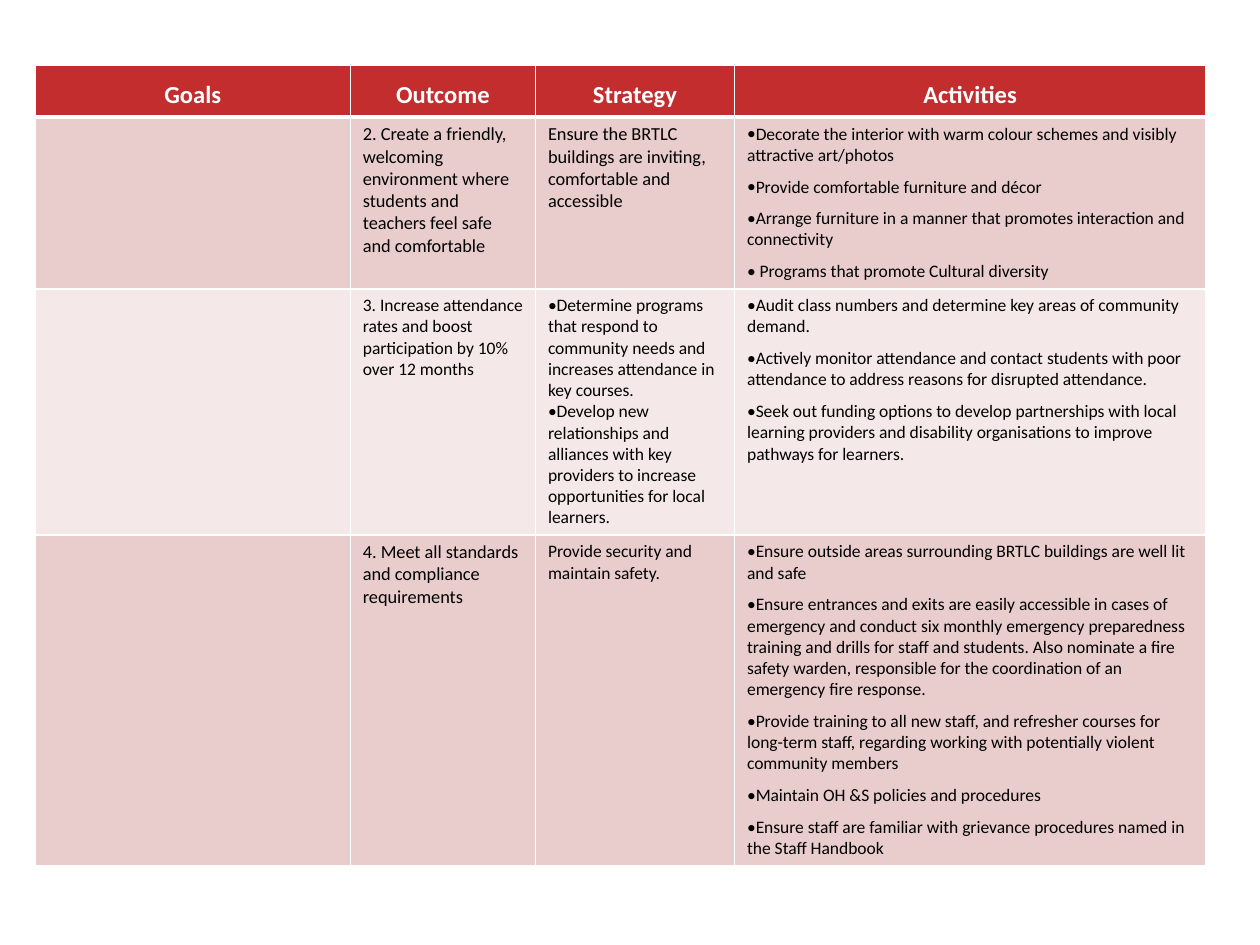
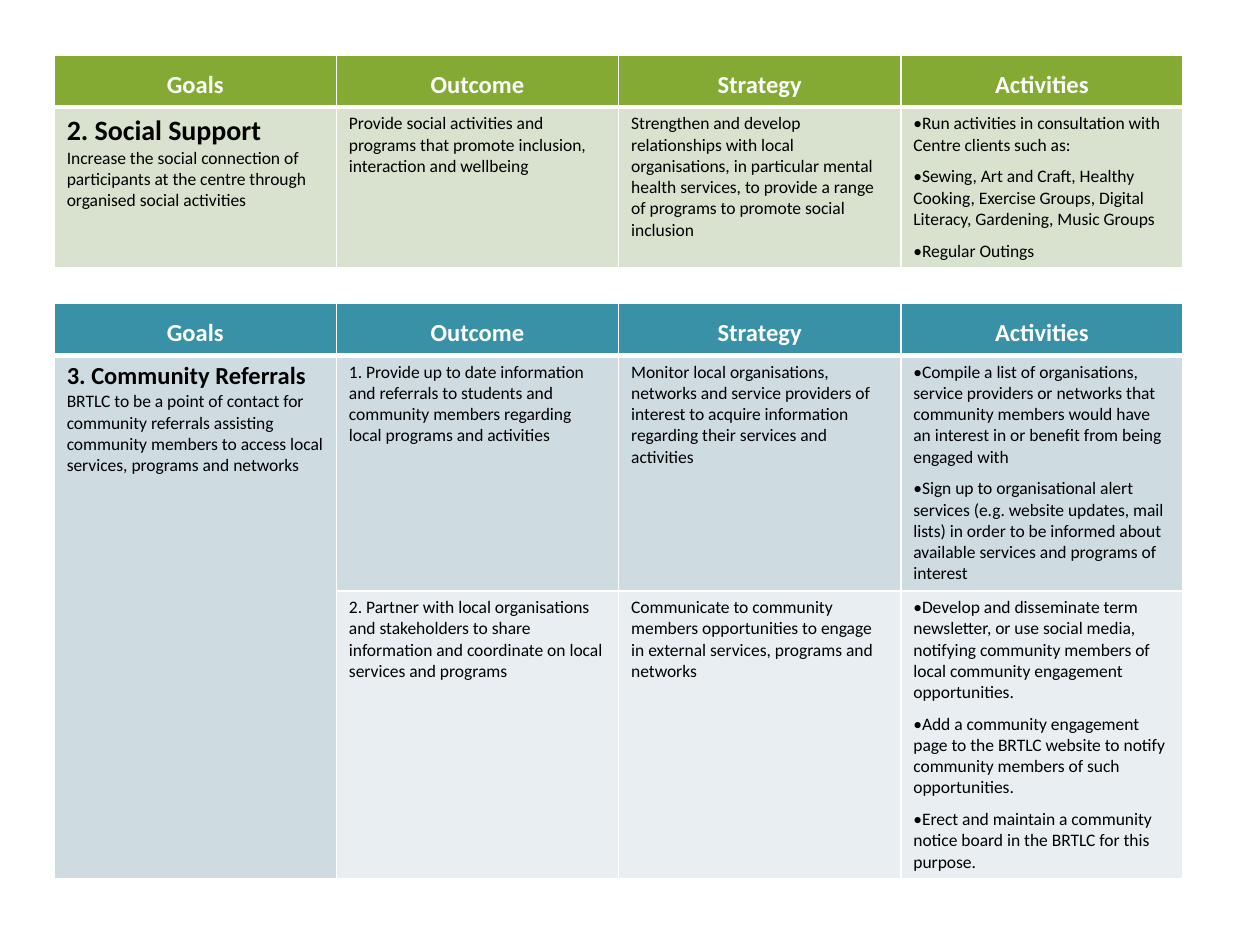
import dataclasses

import lxml.etree
import pptx
import pptx.dml.color
import pptx.enum.text
import pptx.oxml.ns
import pptx.util

Inches = pptx.util.Inches
Pt = pptx.util.Pt


@dataclasses.dataclass(frozen=True)
class Palette:
    header: str
    dark_band: str
    light_band: str


@dataclasses.dataclass(frozen=True)
class Theme:
    font: str = "Calibri"
    text: str = "000000"
    header_text: str = "FFFFFF"
    border: str = "FFFFFF"
    header_size: float = 14
    body_size: float = 10
    outcome_size: float = 10.5
    support_size: float = 16
    referral_size: float = 14
    paragraph_gap: float = 6
    header_spacing: float = 1.5
    border_width: float = 1
    header_border_width: float = 3
    header_height: float = 0.41
    header_margin: float = 0.07
    red: Palette = Palette("C32D2E", "E9CDCD", "F5E8E8")
    green: Palette = Palette("84AA33", "D9E2CE", "D9E2CE")
    blue: Palette = Palette("3891A7", "CEDCE1", "E8EEF1")


@dataclasses.dataclass(frozen=True)
class Line:
    text: str
    size: float
    bold: bool = False
    bullet: bool = False
    before: float = 0
    after: float = 0


THEME = Theme()
HEADINGS = ["Goals", "Outcome", "Strategy", "Activities"]


def plain(text, size=THEME.body_size):
    return [Line(text, size)]


def bullets(*texts, before=0, after=0):
    return [Line(text, THEME.body_size, bullet=True, before=before, after=after) for text in texts]


def goal(title, size, text):
    return [Line(title, size, bold=True), *plain(text)]


class PlanDeck:
    def __init__(self, theme):
        self.theme = theme
        self.presentation = pptx.Presentation()
        self.presentation.slide_width = Inches(10)
        self.presentation.slide_height = Inches(7.5)
        self.slide = None

    def add_slide(self):
        self.slide = self.presentation.slides.add_slide(self.presentation.slide_layouts[6])

    def add_run(self, paragraph, text, size, color, bold):
        run = paragraph.add_run()
        run.text = text
        run.font.name = self.theme.font
        run.font.size = Pt(size)
        run.font.bold = bold
        run.font.color.rgb = pptx.dml.color.RGBColor.from_string(color)

    def add_bullet(self, paragraph):
        properties = paragraph._p.get_or_add_pPr()
        properties.set("marL", "0")
        properties.set("indent", "0")
        lxml.etree.SubElement(properties, pptx.oxml.ns.qn("a:buFont"), typeface=self.theme.font)
        lxml.etree.SubElement(properties, pptx.oxml.ns.qn("a:buChar"), char="•")

    def style_cell(self, cell, color, top, bottom):
        properties = cell._tc.get_or_add_tcPr()
        side = self.theme.border_width
        for edge, width in (("L", side), ("R", side), ("T", top), ("B", bottom)):
            line = lxml.etree.SubElement(properties, pptx.oxml.ns.qn(f"a:ln{edge}"), w=str(Pt(width)))
            fill = lxml.etree.SubElement(line, pptx.oxml.ns.qn("a:solidFill"))
            lxml.etree.SubElement(fill, pptx.oxml.ns.qn("a:srgbClr"), val=self.theme.border)
        cell.fill.solid()
        cell.fill.fore_color.rgb = pptx.dml.color.RGBColor.from_string(color)

    def add_header(self, cell, text, palette):
        theme = self.theme
        self.style_cell(cell, palette.header, theme.border_width, theme.header_border_width)
        cell.margin_left = cell.margin_right = Inches(theme.header_margin)
        cell.margin_top = cell.margin_bottom = 0
        paragraph = cell.text_frame.paragraphs[0]
        paragraph.alignment = pptx.enum.text.PP_ALIGN.CENTER
        paragraph.line_spacing = theme.header_spacing
        paragraph.space_before = Pt(theme.paragraph_gap)
        self.add_run(paragraph, text, theme.header_size, theme.header_text, True)

    def add_lines(self, cell, lines):
        for index, line in enumerate(lines):
            frame = cell.text_frame
            paragraph = frame.add_paragraph() if index else frame.paragraphs[0]
            paragraph.space_before = Pt(line.before)
            paragraph.space_after = Pt(line.after)
            if line.bullet:
                self.add_bullet(paragraph)
            self.add_run(paragraph, line.text, line.size, self.theme.text, line.bold)

    def add_plan(self, left, top, widths, heights, palette, rows):
        theme = self.theme
        heights = [theme.header_height, *heights]
        shape = self.slide.shapes.add_table(
            len(heights), len(widths), Inches(left), Inches(top),
            Inches(sum(widths)), Inches(sum(heights)))
        table = shape.table
        table.horz_banding = False
        for column, width in zip(table.columns, widths):
            column.width = Inches(width)
        for row, height in zip(table.rows, heights):
            row.height = Inches(height)
        for column, heading in enumerate(HEADINGS):
            self.add_header(table.cell(0, column), heading, palette)
        for row, contents in enumerate(rows, start=1):
            color = palette.dark_band if row % 2 else palette.light_band
            top_width = theme.header_border_width if row == 1 else theme.border_width
            for column, lines in enumerate(contents):
                cell = table.cell(row, column)
                self.style_cell(cell, color, top_width, theme.border_width)
                self.add_lines(cell, lines)
        return table


ENVIRONMENT_ROWS = [
    [
        [],
        plain("2. Create a friendly, welcoming environment where students and teachers feel safe and comfortable",
              THEME.outcome_size),
        plain("Ensure the BRTLC buildings are inviting, comfortable and accessible", THEME.outcome_size),
        bullets(
            "Decorate the interior with warm colour schemes and visibly attractive art/photos",
            "Provide comfortable furniture and décor",
            "Arrange furniture in a manner that promotes interaction and connectivity",
            " Programs that promote Cultural diversity",
            after=THEME.paragraph_gap),
    ],
    [
        [],
        plain("3. Increase attendance rates and boost participation by 10% over 12 months"),
        bullets(
            "Determine programs that respond to community needs and increases attendance in key courses.",
            "Develop new relationships and alliances with key providers to increase opportunities "
            "for local learners."),
        bullets(
            "Audit class numbers and determine key areas of community demand.",
            "Actively monitor attendance and contact students with poor attendance to address reasons "
            "for disrupted attendance.",
            "Seek out funding options to develop partnerships with local learning providers and "
            "disability organisations to improve pathways for learners.",
            after=THEME.paragraph_gap),
    ],
    [
        [],
        plain("4. Meet all standards and compliance requirements", THEME.outcome_size),
        plain("Provide security and maintain safety."),
        bullets(
            "Ensure outside areas surrounding BRTLC buildings are well lit and safe",
            "Ensure entrances and exits are easily accessible in cases of emergency and conduct six "
            "monthly emergency preparedness training and drills for staff and students. Also nominate "
            "a fire safety warden, responsible for the coordination of an emergency fire response.",
            "Provide training to all new staff, and refresher courses for long-term staff, regarding "
            "working with potentially violent community members",
            "Maintain OH &S policies and procedures",
            "Ensure staff are familiar with grievance procedures named in the Staff Handbook",
            after=THEME.paragraph_gap),
    ],
]

SOCIAL_ROWS = [
    [
        goal("2. Social Support", THEME.support_size,
             "Increase the social connection of participants at the centre through organised social activities"),
        plain("Provide social activities and programs that promote inclusion, interaction and wellbeing"),
        plain("Strengthen and develop relationships with local organisations, in particular mental health "
              "services, to provide a range of programs to promote social inclusion"),
        bullets(
            "Run activities in consultation with Centre clients such as:",
            "Sewing, Art and Craft, Healthy Cooking, Exercise Groups, Digital Literacy, Gardening, Music Groups",
            "Regular Outings",
            before=THEME.paragraph_gap),
    ],
]

REFERRAL_ROWS = [
    [
        goal("3. Community Referrals", THEME.referral_size,
             "BRTLC to be a point of contact for community referrals assisting community members to access "
             "local services, programs and networks"),
        plain("1. Provide up to date information and referrals to students and community members regarding "
              "local programs and activities"),
        plain("Monitor local organisations, networks and service providers of interest to acquire "
              "information regarding their services and activities"),
        bullets(
            "Compile a list of organisations, service providers or networks that community members would "
            "have an interest in or benefit from being engaged with",
            "Sign up to organisational alert services (e.g. website updates, mail lists) in order to be "
            "informed about available services and programs of interest",
            before=THEME.paragraph_gap),
    ],
    [
        [],
        plain("2. Partner with local organisations and stakeholders to share information and coordinate on "
              "local services and programs"),
        plain("Communicate to community members opportunities to engage in external services, programs "
              "and networks"),
        bullets(
            "Develop and disseminate term newsletter, or use social media, notifying community members of "
            "local community engagement opportunities.",
            "Add a community engagement page to the BRTLC website to notify community members of such "
            "opportunities.",
            "Erect and maintain a community notice board in the BRTLC for this purpose.",
            before=THEME.paragraph_gap),
    ],
]


def main():
    deck = PlanDeck(THEME)

    deck.add_slide()
    deck.add_plan(0.28, 0.52, [2.5, 1.47, 1.58, 3.74], [1.36, 1.95, 2.62], THEME.red, ENVIRONMENT_ROWS)

    deck.add_slide()
    equal_widths = [2.24] * len(HEADINGS)
    deck.add_plan(0.43, 0.44, equal_widths, [1.27], THEME.green, SOCIAL_ROWS)
    referrals = deck.add_plan(0.43, 2.41, equal_widths, [1.86, 2.28], THEME.blue, REFERRAL_ROWS)
    referrals.cell(1, 0).merge(referrals.cell(2, 0))

    deck.presentation.save("out.pptx")


if __name__ == "__main__":
    main()
